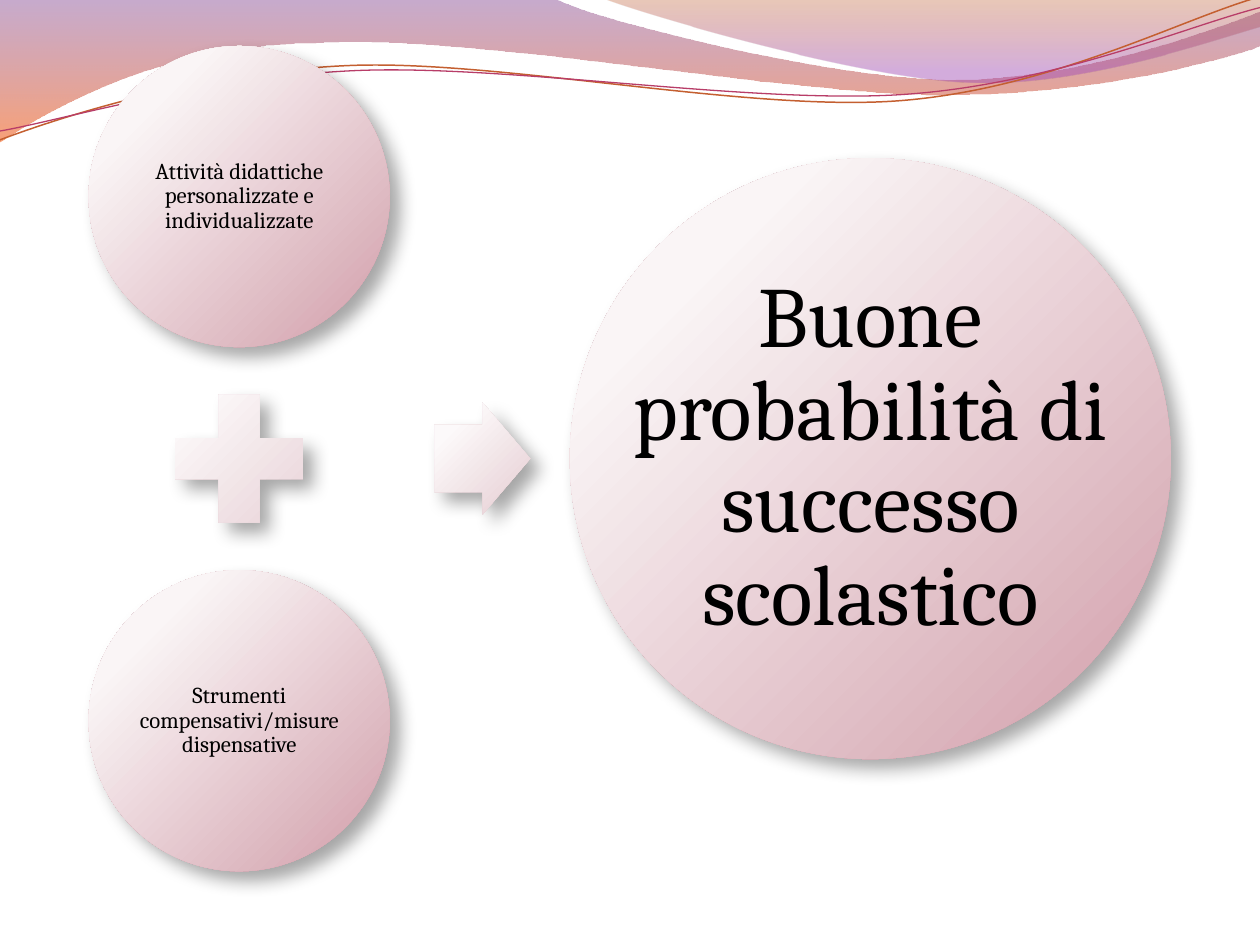
from itertools import chain
from math import cos, radians, sin

from pptx import Presentation
from pptx.dml.color import RGBColor
from pptx.enum.shapes import MSO_SHAPE
from pptx.enum.text import MSO_ANCHOR, PP_ALIGN
from pptx.oxml import parse_xml
from pptx.oxml.ns import nsdecls, qn
from pptx.util import Inches, Pt

SLIDE_WIDTH, SLIDE_HEIGHT = Inches(10), Inches(7.5)
COLUMNS = 100
CELL = SLIDE_WIDTH / COLUMNS
CURVE_TILT = -2.7

BLACK = RGBColor(0x00, 0x00, 0x00)
PURPLE = RGBColor(0x83, 0x45, 0x91)
ORANGE = RGBColor(0xF3, 0x53, 0x07)
BROWN = RGBColor(0xB7, 0x49, 0x15)
VIOLET = RGBColor(0xA1, 0x4B, 0xB4)
RUST = RGBColor(0xC4, 0x5F, 0x30)
RASPBERRY = RGBColor(0xB8, 0x3D, 0x68)
CIRCLE_LIGHT = RGBColor(0xFA, 0xF5, 0xF6)
CIRCLE_DARK = RGBColor(0xD1, 0x9D, 0xA9)
SIGN_LIGHT = RGBColor(0xFC, 0xF9, 0xFA)
SIGN_DARK = RGBColor(0xE5, 0xCC, 0xD1)

VERTICAL = '<a:lin ang="5400000" scaled="0"/>'
RADIAL = ('<a:path path="circle"><a:fillToRect l="-15000" t="-15000" '
          'r="115000" b="115000"/></a:path>')

CAUSE_X, ARROW_X, RESULT_X = 18.98, 38.3, 69.08
MIDDLE_Y, CAUSE_PITCH = 36.4, 20.8
CAUSE_SIZE, RESULT_SIZE = 23.9, 47.7

LEFT_WAVE = [
    [(0, -0.1)], [(44, -0.1)],
    [(47.6, 1.7), (66.4, 6.3), (75.8, 6.3)],
    [(85.3, 6.3), (95.8, 2.6), (100, 0.9)],
    [(100.1, 3.6)],
    [(98.3, 4.4), (87, 7.6), (74.6, 7.5)],
    [(62.2, 7.5), (38.2, 2.8), (25.7, 3.4)],
    [(12.9, 3.5), (4.6, 8.3), (-0.1, 11.3)],
    [(0, -0.1)],
]
RIGHT_WAVE = [
    [(47.9, -0.1)],
    [(50.9, 1.1), (68.2, 6.2), (76.9, 6.5)],
    [(85.6, 6.9), (96.1, 3.2), (100, 2.1)],
    [(100, 0)], [(47.9, -0.1)],
]
RUST_CURVE = [
    [(0, 11.1)],
    [(4.8, 9.3), (15.8, 5.7), (27.7, 5.2)],
    [(39.5, 4.7), (59.3, 8.9), (71.3, 8)],
    [(83.3, 7.1), (93.8, 1.5), (99.8, -0.2)],
]
RASPBERRY_CURVE = [
    [(0, 10.4)],
    [(4.7, 9.6), (16.4, 6.1), (28.3, 5.6)],
    [(40.3, 5.1), (59.7, 8.3), (71.7, 7.5)],
    [(83.6, 6.7), (94.1, 2.1), (100, 0.6)],
]


def turn(point, pivot, degrees):
    angle = radians(degrees)
    dx, dy = point[0] - pivot[0], point[1] - pivot[1]
    return (pivot[0] + dx * cos(angle) - dy * sin(angle),
            pivot[1] + dx * sin(angle) + dy * cos(angle))


def bend(shape, segments):
    lines = iter(list(shape.element.spPr.iter(qn("a:lnTo"))))
    for segment in segments:
        first, *others = [next(lines) for _ in segment]
        if others:
            first.tag = qn("a:cubicBezTo")
        for line in others:
            first.extend(list(line))
            line.getparent().remove(line)


def add_outline(page, outline, closed):
    start, *others = [(x * CELL, y * CELL) for x, y in chain(*outline)]
    builder = page.shapes.build_freeform(*start)
    builder.add_line_segments(others, close=closed)
    shape = builder.convert_to_shape()
    bend(shape, outline[1:])
    shape.shadow.inherit = False
    return shape


def fill_gradient(shape, stops, direction):
    marks = "".join(
        f'<a:gs pos="{place * 1000}"><a:srgbClr val="{color}">'
        f'<a:alpha val="{opacity * 1000}"/></a:srgbClr></a:gs>'
        for place, color, opacity in stops)
    shape.fill.gradient()
    properties = shape.element.spPr
    properties.replace(properties.find(qn("a:gradFill")), parse_xml(
        f'<a:gradFill {nsdecls("a")} rotWithShape="1">'
        f'<a:gsLst>{marks}</a:gsLst>{direction}</a:gradFill>'))


def add_wave(page, outline, stops):
    wave = add_outline(page, outline, True)
    fill_gradient(wave, stops, VERTICAL)
    wave.line.fill.background()


def add_curve(page, outline, pivot, color, width):
    level = [[turn(point, pivot, -CURVE_TILT) for point in segment]
             for segment in outline]
    curve = add_outline(page, level, False)
    curve.rotation = CURVE_TILT
    curve.fill.background()
    curve.line.color.rgb = color
    curve.line.width = Pt(width)


def centred(x, y, width, height):
    return [round(n * CELL) for n in (x - width / 2, y - height / 2, width, height)]


def add_raised_shape(page, kind, box, light, dark):
    shape = page.shapes.add_shape(kind, *box)
    fill_gradient(shape, [(20, light, 100), (100, dark, 100)], RADIAL)
    shape.line.fill.background()
    shape.shadow.inherit = False
    shape.element.spPr.find(qn("a:effectLst")).append(parse_xml(
        f'<a:outerShdw {nsdecls("a")} blurRad="{Pt(10.2)}" dist="{Pt(8)}" '
        f'dir="2700000" algn="tl" rotWithShape="0"><a:srgbClr val="{BLACK}">'
        '<a:alpha val="35000"/></a:srgbClr></a:outerShdw>'))
    return shape


def add_circle(page, text, x, y, size, font_size, margin):
    box = centred(x, y, size, size)
    add_raised_shape(page, MSO_SHAPE.OVAL, box, CIRCLE_LIGHT, CIRCLE_DARK)
    frame = page.shapes.add_textbox(*box).text_frame
    frame.word_wrap = True
    frame.vertical_anchor = MSO_ANCHOR.MIDDLE
    frame.margin_left = frame.margin_right = Inches(margin)
    frame.margin_top = frame.margin_bottom = Inches(margin)
    frame.text = text
    para = frame.paragraphs[0]
    para.alignment = PP_ALIGN.CENTER
    para.line_spacing = 0.9
    span = para.runs[0]
    span.font.name = "Cambria"
    span.font.size = Pt(font_size)
    span.font.color.rgb = BLACK


def add_sign(page, kind, x, width, height):
    return add_raised_shape(page, kind, centred(x, MIDDLE_Y, width, height),
                            SIGN_LIGHT, SIGN_DARK)


def main():
    deck = Presentation()
    deck.slide_width, deck.slide_height = SLIDE_WIDTH, SLIDE_HEIGHT
    page = deck.slides.add_slide(deck.slide_layouts[6])

    add_wave(page, LEFT_WAVE, [(0, PURPLE, 45), (100, ORANGE, 55)])
    add_wave(page, RIGHT_WAVE, [(0, BROWN, 30), (80, VIOLET, 45)])
    add_curve(page, RUST_CURVE, (49.9, 5.75), RUST, 0.85)
    add_curve(page, RASPBERRY_CURVE, (49.95, 5.9), RASPBERRY, 0.75)

    add_circle(page, "Attività didattiche personalizzate e individualizzate",
               CAUSE_X, MIDDLE_Y - CAUSE_PITCH, CAUSE_SIZE, 13, 0.02)
    add_sign(page, MSO_SHAPE.MATH_PLUS, CAUSE_X, 13.8, 13.8)
    add_circle(page, "Strumenti compensativi/misure dispensative",
               CAUSE_X, MIDDLE_Y + CAUSE_PITCH, CAUSE_SIZE, 13, 0.02)
    arrow = add_sign(page, MSO_SHAPE.RIGHT_ARROW, ARROW_X, 7.6, 8.9)
    arrow.adjustments[0] = 0.6
    add_circle(page, "Buone probabilità di successo scolastico",
               RESULT_X, MIDDLE_Y, RESULT_SIZE, 49, 0.07)

    deck.save("out.pptx")


if __name__ == "__main__":
    main()
